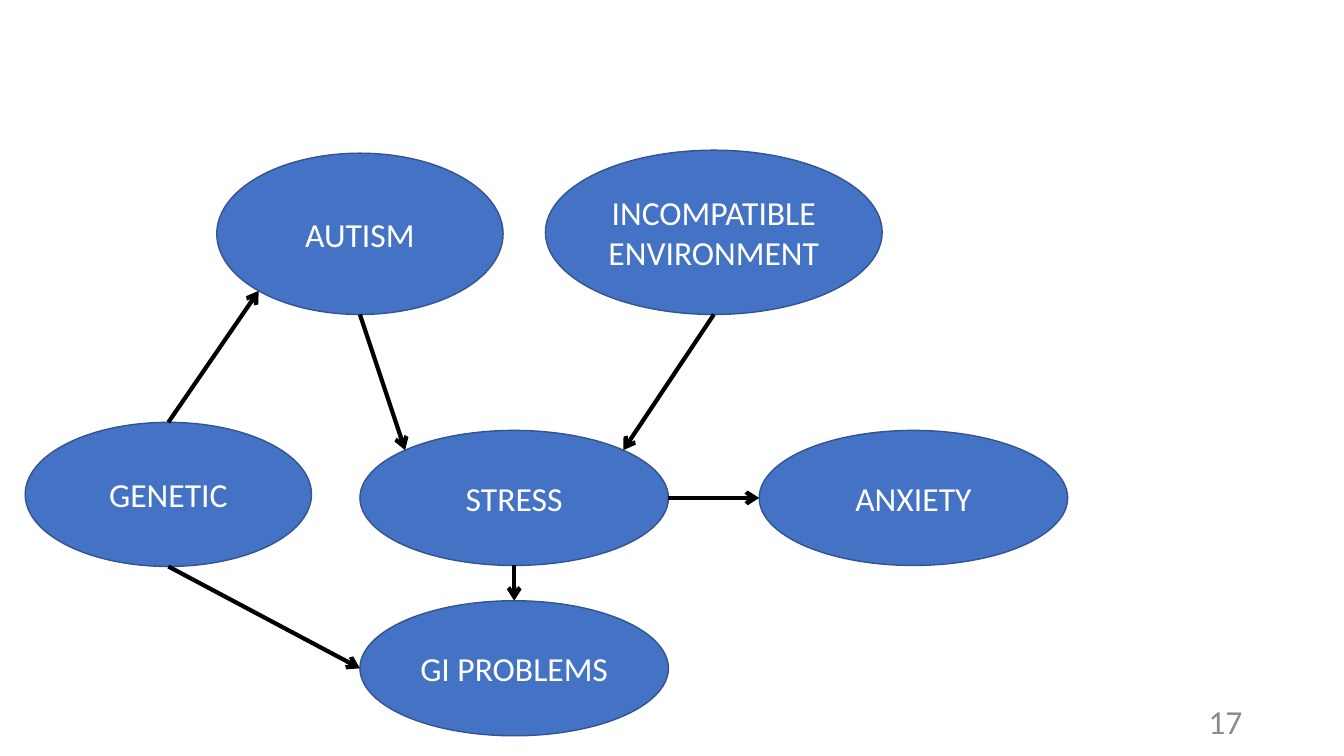
from dataclasses import dataclass
from enum import IntEnum
from math import cos, pi, sin

from lxml.etree import SubElement
from pptx import Presentation
from pptx.dml.color import RGBColor
from pptx.enum.shapes import MSO_CONNECTOR, MSO_SHAPE
from pptx.enum.text import MSO_ANCHOR, PP_ALIGN
from pptx.oxml.ns import qn
from pptx.shapes.autoshape import Shape
from pptx.slide import Slide
from pptx.text.text import TextFrame
from pptx.util import Inches, Pt

COLOURS = {
    "fill": "4472C4",
    "outline": "325491",
    "arrow": "000000",
    "label": "FFFFFF",
    "number": "8C8C8C",
}


class Site(IntEnum):
    """Connection sites of an ellipse, counted anticlockwise from the top."""
    TOP = 0
    TOP_LEFT = 1
    LEFT = 2
    BOTTOM_LEFT = 3
    BOTTOM = 4
    BOTTOM_RIGHT = 5
    RIGHT = 6
    TOP_RIGHT = 7


@dataclass(frozen=True)
class Factor:
    label: str
    left: float
    top: float
    width: float
    height: float


@dataclass(frozen=True)
class Influence:
    cause: str
    cause_site: Site
    effect: str
    effect_site: Site


FACTORS = {
    "autism": Factor("AUTISM", 2.15, 1.52, 2.84, 1.6),
    "environment": Factor("INCOMPATIBLE\vENVIRONMENT", 5.41, 1.49, 3.34, 1.63),
    "genetic": Factor("GENETIC", 0.25, 4.19, 2.84, 1.43),
    "stress": Factor("STRESS", 3.57, 4.27, 3.06, 1.34),
    "anxiety": Factor("ANXIETY", 7.53, 4.27, 3.06, 1.34),
    "gut": Factor("GI PROBLEMS", 3.57, 5.96, 3.06, 1.34),
}

INFLUENCES = [
    Influence("genetic", Site.TOP, "autism", Site.BOTTOM_LEFT),
    Influence("genetic", Site.BOTTOM, "gut", Site.LEFT),
    Influence("autism", Site.BOTTOM, "stress", Site.TOP_LEFT),
    Influence("environment", Site.BOTTOM, "stress", Site.TOP_RIGHT),
    Influence("stress", Site.RIGHT, "anxiety", Site.LEFT),
    Influence("stress", Site.BOTTOM, "gut", Site.TOP),
]


def colour(name: str) -> RGBColor:
    return RGBColor.from_string(COLOURS[name])


def write_text(frame: TextFrame, text: str, colour_name: str, alignment: PP_ALIGN) -> None:
    frame.word_wrap = True
    frame.vertical_anchor = MSO_ANCHOR.MIDDLE
    frame.text = text
    paragraph = frame.paragraphs[0]
    paragraph.alignment = alignment
    paragraph.font.name = "Calibri"
    paragraph.font.size = Pt(24)
    paragraph.font.color.rgb = colour(colour_name)


def draw_factor(page: Slide, factor: Factor) -> Shape:
    ellipse = page.shapes.add_shape(
        MSO_SHAPE.OVAL, Inches(factor.left), Inches(factor.top),
        Inches(factor.width), Inches(factor.height))
    ellipse.shadow.inherit = False
    ellipse.fill.solid()
    ellipse.fill.fore_color.rgb = colour("fill")
    ellipse.line.color.rgb = colour("outline")
    ellipse.line.width = Pt(1)
    write_text(ellipse.text_frame, factor.label, "label", PP_ALIGN.CENTER)
    return ellipse


def site_point(ellipse: Shape, site: Site) -> tuple[int, int]:
    angle = site * pi / 4
    x = ellipse.left + ellipse.width / 2 * (1 - sin(angle))
    y = ellipse.top + ellipse.height / 2 * (1 - cos(angle))
    return round(x), round(y)


def draw_influence(page: Slide, influence: Influence, ellipses: dict[str, Shape]) -> None:
    cause, effect = ellipses[influence.cause], ellipses[influence.effect]
    arrow = page.shapes.add_connector(
        MSO_CONNECTOR.STRAIGHT,
        *site_point(cause, influence.cause_site),
        *site_point(effect, influence.effect_site))
    arrow.line.color.rgb = colour("arrow")
    arrow.line.width = Pt(3)
    SubElement(arrow.line._get_or_add_ln(), qn("a:tailEnd"), type="arrow")
    SubElement(arrow._element.spPr, qn("a:effectLst"))

    # Join both ends: begin_connect only knows the four sites of a rectangle
    joints = arrow._element.find(f"{qn('p:nvCxnSpPr')}/{qn('p:cNvCxnSpPr')}")
    for tag, ellipse, site in (("a:stCxn", cause, influence.cause_site),
                               ("a:endCxn", effect, influence.effect_site)):
        SubElement(joints, qn(tag), id=str(ellipse.shape_id), idx=str(site.value))


def main() -> None:
    deck = Presentation()
    deck.slide_width, deck.slide_height = Inches(13.33), Inches(7.5)
    page = deck.slides.add_slide(deck.slide_layouts[6])

    # Factors and the arrows between them
    ellipses = {name: draw_factor(page, factor) for name, factor in FACTORS.items()}
    for influence in INFLUENCES:
        draw_influence(page, influence, ellipses)

    # Page number
    number_box = page.shapes.add_textbox(Inches(9.42), Inches(6.95), Inches(3), Inches(0.4))
    write_text(number_box.text_frame, "17", "number", PP_ALIGN.RIGHT)

    deck.save("out.pptx")


if __name__ == "__main__":
    main()
